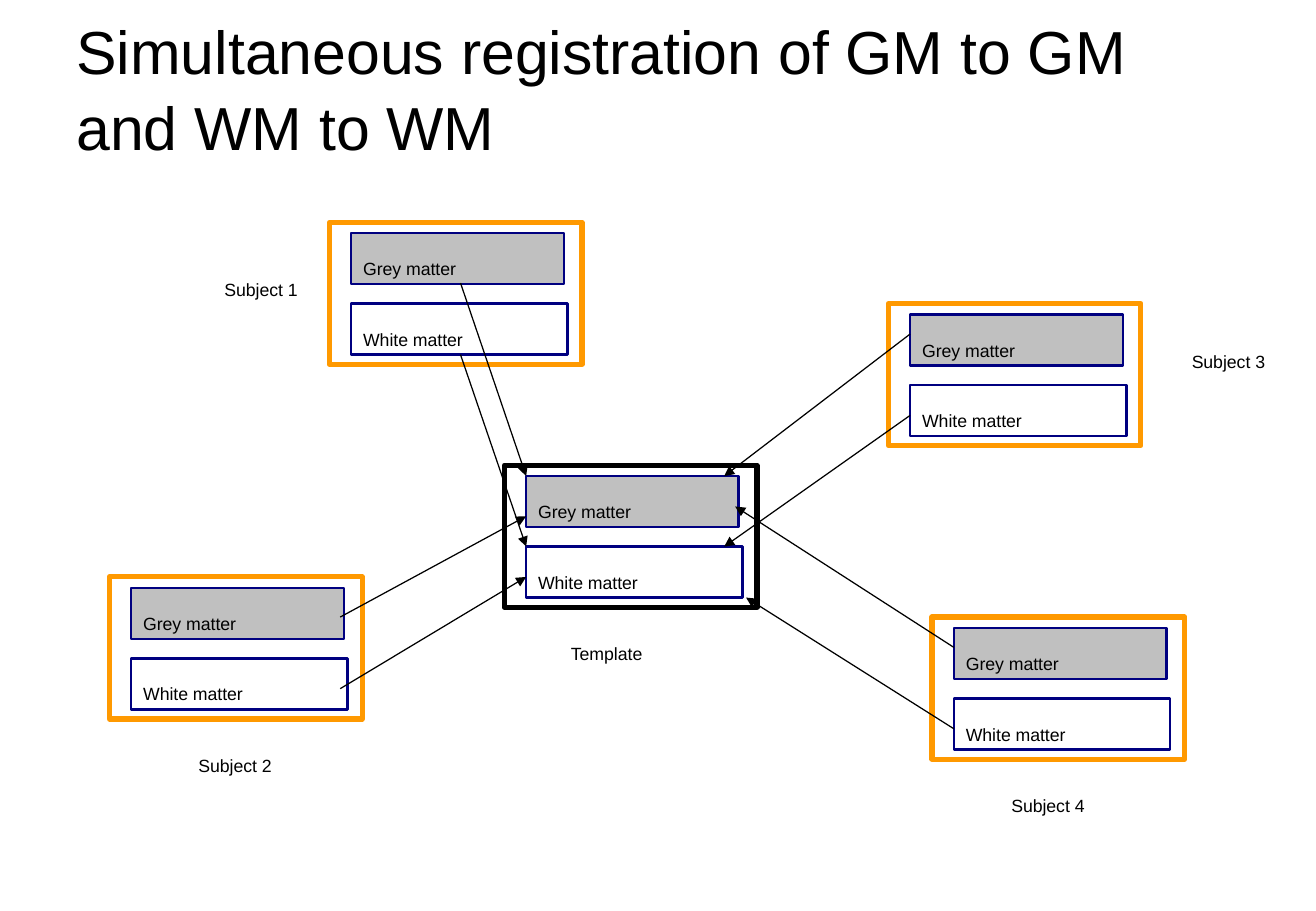
from lxml import etree
from pptx import Presentation
from pptx import util as u
from pptx.dml.color import RGBColor
from pptx.enum import shapes, text
from pptx.oxml import ns

BLACK = RGBColor(0x00, 0x00, 0x00)
GREY = RGBColor(0xC0, 0xC0, 0xC0)
NAVY = RGBColor(0x00, 0x00, 0x80)
ORANGE = RGBColor(0xFF, 0x99, 0x00)

# Frame left and top, frame colour
FRAMES = [
    (4.15, 3.83, BLACK),
    (7.31, 2.5, ORANGE),
    (7.67, 5.08, ORANGE),
    (2.71, 1.83, ORANGE),
    (0.9, 4.75, ORANGE),
]

# Label, left, top, width, alignment
LABELS = [
    ("Template", 4.6, 5.08, 1.35, text.PP_ALIGN.LEFT),
    ("Subject 1", 1.48, 2.08, 1.34, text.PP_ALIGN.CENTER),
    ("Subject 2", 1.26, 6, 1.35, text.PP_ALIGN.CENTER),
    ("Subject 3", 9.39, 2.67, 1.44, text.PP_ALIGN.CENTER),
    ("Subject 4", 7.94, 6.33, 1.37, text.PP_ALIGN.CENTER),
]

# Subject point to template point
GREY_ARROWS = [
    ((2.8, 5.08), (4.33, 4.25)),
    ((3.79, 2.33), (4.33, 3.92)),
    ((7.49, 2.75), (5.96, 3.92)),
    ((7.85, 5.33), (6.05, 4.17)),
]
WHITE_ARROWS = [
    ((2.8, 5.67), (4.33, 4.75)),
    ((3.79, 2.92), (4.33, 4.5)),
    ((7.49, 3.42), (5.96, 4.5)),
    ((7.85, 6), (6.14, 4.92)),
]


class Diagram:
    font = "Arial"
    title_size = 36
    body_size = 10.5

    def __init__(self, slide):
        self.s = slide

    def put_text(self, sp, words, size, align, bottom, wrap):
        """Fill a shape with one paragraph resting on its bottom edge."""
        tf = sp.text_frame
        tf.word_wrap = wrap
        tf.vertical_anchor = text.MSO_ANCHOR.BOTTOM
        tf.margin_bottom = u.Inches(bottom)
        p = tf.paragraphs[0]
        p.alignment = align
        r = p.add_run()
        r.text = words
        r.font.name = self.font
        r.font.size = u.Pt(size)
        r.font.color.rgb = BLACK
        return p

    def title(self, words):
        sp = self.s.shapes.add_textbox(
            u.Inches(0.53), u.Inches(0.49), u.Inches(9.69), u.Inches(0.9))
        p = self.put_text(sp, words, self.title_size, text.PP_ALIGN.LEFT, 0.05, True)
        p.line_spacing = 1.05

    def label(self, words, x, y, w, align):
        sp = self.s.shapes.add_textbox(
            u.Inches(x), u.Inches(y), u.Inches(w), u.Inches(0.4))
        self.put_text(sp, words, self.body_size, align, 0.01, True)

    def rect(self, x, y, w, h, line, weight, fill=None):
        sp = self.s.shapes.add_shape(
            shapes.MSO_SHAPE.RECTANGLE,
            u.Inches(x), u.Inches(y), u.Inches(w), u.Inches(h))
        sp.shadow.inherit = False
        if fill is None:
            sp.fill.background()
        else:
            sp.fill.solid()
            sp.fill.fore_color.rgb = fill
        sp.line.color.rgb = line
        sp.line.width = u.Pt(weight)
        return sp

    def tissue_pair(self, x, y, colour):
        """Grey and white matter boxes inside one frame."""
        for words, dy, w, fill in (("Grey matter", 0.09, 1.75, GREY),
                                   ("White matter", 0.67, 1.78, None)):
            sp = self.rect(x + 0.18, y + dy, w, 0.42, NAVY, 1.5, fill)
            self.put_text(sp, words, self.body_size, text.PP_ALIGN.LEFT, 0.04, False)
        self.rect(x, y, 2.08, 1.17, colour, 3)

    def arrow(self, start, end):
        c = self.s.shapes.add_connector(
            shapes.MSO_CONNECTOR.STRAIGHT,
            *(u.Inches(v) for v in start + end))
        c.line.color.rgb = BLACK
        c.line.width = u.Pt(0.75)
        props = c._element.spPr
        etree.SubElement(props.find(ns.qn("a:ln")), ns.qn("a:tailEnd"), type="triangle")
        etree.SubElement(props, ns.qn("a:effectLst"))


def main():
    prs = Presentation()
    prs.slide_width = u.Inches(10.83)
    prs.slide_height = u.Inches(7.5)
    d = Diagram(prs.slides.add_slide(prs.slide_layouts[6]))
    d.title("Simultaneous registration of GM to GM and WM to WM")
    for frame in FRAMES:
        d.tissue_pair(*frame)
    for start, end in GREY_ARROWS + WHITE_ARROWS:
        d.arrow(start, end)
    for label in LABELS:
        d.label(*label)
    prs.save("out.pptx")


if __name__ == "__main__":
    main()
